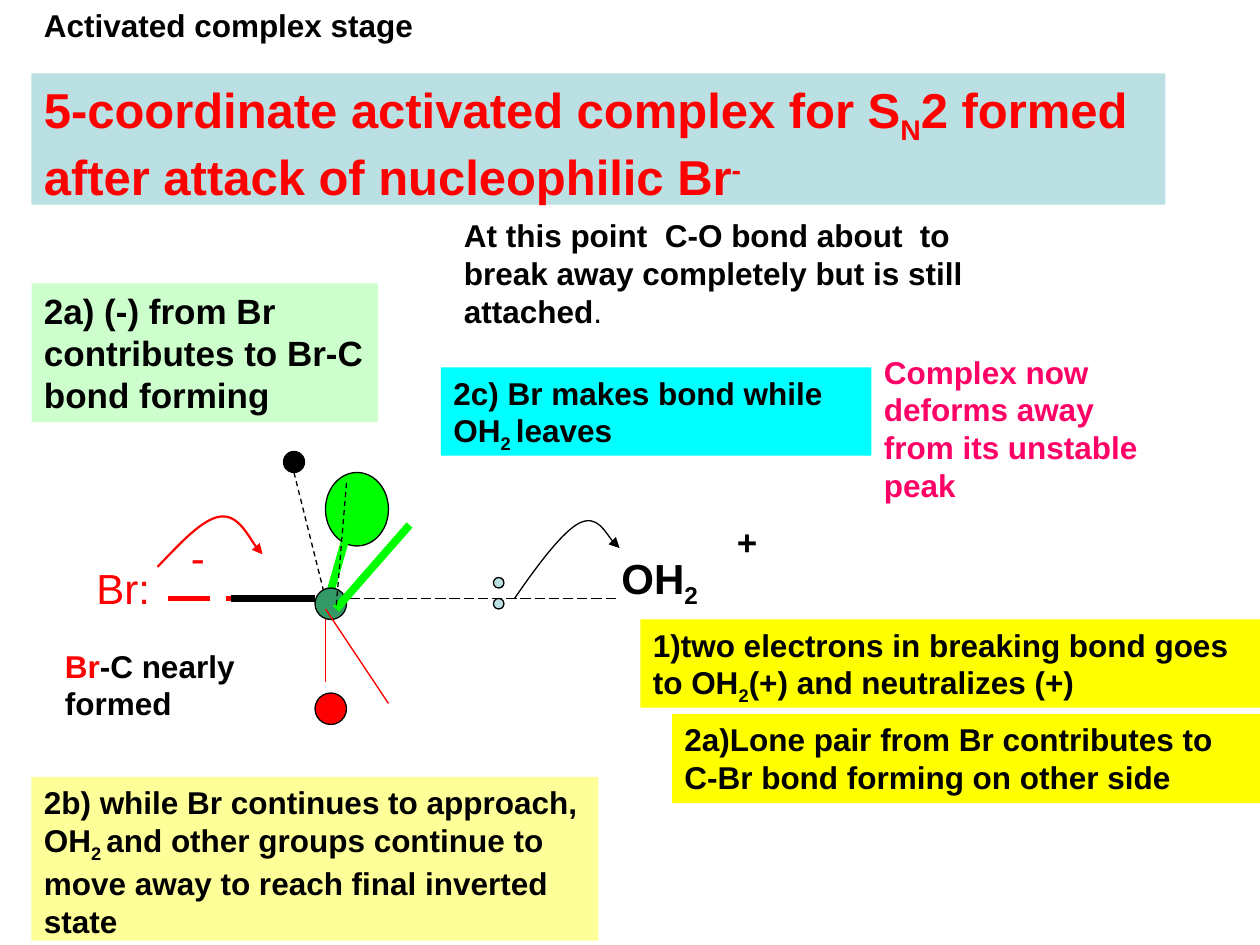
from lxml import etree
from pptx import Presentation
from pptx.dml.color import RGBColor
from pptx.enum.dml import MSO_LINE
from pptx.enum.shapes import MSO_CONNECTOR, MSO_SHAPE
from pptx.enum.text import MSO_ANCHOR, MSO_AUTO_SIZE
from pptx.oxml.ns import qn
from pptx.util import Inches, Pt

STRAIGHT = MSO_CONNECTOR.STRAIGHT
OVAL = MSO_SHAPE.OVAL
TOP = MSO_ANCHOR.TOP
FIT = MSO_AUTO_SIZE.SHAPE_TO_FIT_TEXT
DASH, LONG = MSO_LINE.DASH, MSO_LINE.LONG_DASH
SUB, SUP = "-25000", "30000"

C = {name: RGBColor.from_string(value) for name, value in {
    "black": "000000", "red": "FF0000", "green": "00FF00", "pink": "FF0066",
    "carbon": "339966", "pale blue": "BBE0E3", "mint": "CCFFCC",
    "cream": "FFFF99", "yellow": "FFFF00", "cyan": "00FFFF",
}.items()}

prs = Presentation()
prs.slide_width, prs.slide_height = Inches(10), Inches(7.5)
s = prs.slides.add_slide(prs.slide_layouts[6])
unit = prs.slide_width / 120


def grid(*cells):
    return [round(cell * unit) for cell in cells]


def set_line(shape, color, width, dash=None):
    shape.line.color.rgb = C[color]
    shape.line.width = Pt(width)
    if dash:
        shape.line.dash_style = dash
    sp_pr = shape._element.spPr
    if sp_pr.find(qn("a:effectLst")) is None:
        etree.SubElement(sp_pr, qn("a:effectLst"))


texts = [
    ((3, 7, 108, 12.5), "pale blue", 28, True, "red",
     [("5-coordinate activated complex for S",), ("N", SUB),
      ("2 formed after attack of nucleophilic Br",), ("-", SUP)]),
    ((8, 53, 12, 6), None, 24, False, "red", [("Br:",)]),
    ((58, 52, 13, 10.8), None, 24, True, "black", [("OH",), ("2", SUB)]),
    ((17, 50, 7, 6), None, 24, False, "red", [("-",)]),
    ((43, 20, 51, 12), None, 18, True, "black",
     [("At this point  C-O bond about  to break away completely but is still attached",),
      (".", None, None, False)]),
    ((61, 59, 59, 8.4), "yellow", 18, True, "black",
     [("1)two electrons in breaking bond goes to OH",), ("2", SUB),
      ("(+) and neutralizes (+)",)]),
    ((64, 68, 56, 8.5), "yellow", 18, True, "black",
     [("2a)Lone pair from Br contributes to C-Br bond forming on other side",)]),
    ((3, 27, 33, 13.2), "mint", 20, True, "black",
     [("2a) (-) from Br contributes to Br-C bond forming",)]),
    ((3, 74, 54, 15.6), "cream", 18, True, "black",
     [("2b) while Br continues to approach, OH",), ("2 ", SUB),
      ("and other groups continue to move away to reach final inverted state",)]),
    ((5, 61, 19, 8.4), None, 18, True, "black",
     [("Br", None, "red"), ("-C nearly formed",)]),
    ((69, 49, 5, 5.2), None, 20, True, "black", [("+",)]),
    ((83, 33, 28, 15.6), None, 18, True, "pink",
     [("Complex now deforms away from its unstable peak",)]),
    ((42, 35, 41, 8.4), "cyan", 18, True, "black",
     [("2c) Br makes bond while OH",), ("2 ", SUB), ("leaves",)]),
    ((3, 0, 38, 4.8), None, 18, True, "black", [("Activated complex stage",)]),
]
for box, fill, size, bold, color, runs in texts:
    sp = s.shapes.add_textbox(*grid(*box))
    if fill:
        sp.fill.solid()
        sp.fill.fore_color.rgb = C[fill]
    tf = sp.text_frame
    tf.word_wrap, tf.auto_size, tf.vertical_anchor = True, FIT, TOP
    p = tf.paragraphs[0]
    p.font.name, p.font.size = "Arial", Pt(size)
    p.font.bold, p.font.color.rgb = bold, C[color]
    for text, *style in runs:
        base, run_color, run_bold = style + [None] * (3 - len(style))
        r = p.add_run()
        r.text = text
        if base:
            r._r.get_or_add_rPr().set("baseline", base)
        if run_color:
            r.font.color.rgb = C[run_color]
        if run_bold is not None:
            r.font.bold = run_bold

molecule = [
    ("ball", (31, 45, 6, 7), "green"),
    ("bond", (31, 58, 33, 51), "green", 4.5),
    ("bond", (28, 45, 31, 57), "black", 0.75, DASH),
    ("ball", (27, 43, 2, 2), "black"),
    ("bond", (16, 57, 30, 57), "red", 3, LONG),
    ("ball", (30, 66, 3, 3), "red"),
    ("bond", (31, 58, 31, 65), "red", 0.75),
    ("bond", (32, 57, 59, 57), "black", 0.75, LONG),
    ("ball", (30, 56, 3, 3), "carbon"),
    ("bond", (23, 57, 29, 57), "red", 3),
    ("ball", (47, 57, 1, 1), "pale blue"),
    ("ball", (47, 55, 1, 1), "pale blue"),
    ("bond", (30, 57, 22, 57), "black", 4.5),
    ("bond", (32, 58, 39, 50), "green", 4.5),
    ("bond", (33, 46, 32, 58), "black", 0.75, DASH),
    ("bond", (31, 58, 37, 67), "red", 0.75),
]
for kind, place, color, *stroke in molecule:
    if kind == "bond":
        sp = s.shapes.add_connector(STRAIGHT, *grid(*place))
        set_line(sp, color, *stroke)
    else:
        sp = s.shapes.add_shape(OVAL, *grid(*place))
        sp.shadow.inherit = False
        sp.fill.solid()
        sp.fill.fore_color.rgb = C[color]
        set_line(sp, "black", 0.75)

arrows = [
    ("black", 0.75, [(49, 57), (51.2, 53.8), (53.6, 50.6), (55.2, 49.8),
                     (56.9, 49), (58.3, 51.8), (59, 52.2)]),
    ("red", 1.25, [(15, 54), (17.2, 51.7), (19.3, 49.4), (21, 49.2),
                   (22.7, 49), (24.4, 52.4), (25, 52.8)]),
]
for color, width, points in arrows:
    start, *rest = [grid(*point) for point in points]
    outline = s.shapes.build_freeform(*start)
    outline.add_line_segments(rest, close=False)
    sp = outline.convert_to_shape()
    sp.shadow.inherit = False
    sp.fill.background()
    set_line(sp, color, width)
    etree.SubElement(sp.line._get_or_add_ln(), qn("a:tailEnd"), type="triangle")
    segments = list(sp._element.iter(qn("a:lnTo")))
    track = segments[0].getparent()
    for i in range(0, len(segments), 3):
        curve = etree.SubElement(track, qn("a:cubicBezTo"))
        for segment in segments[i:i + 3]:
            curve.append(segment[0])
            track.remove(segment)

prs.save("out.pptx")
